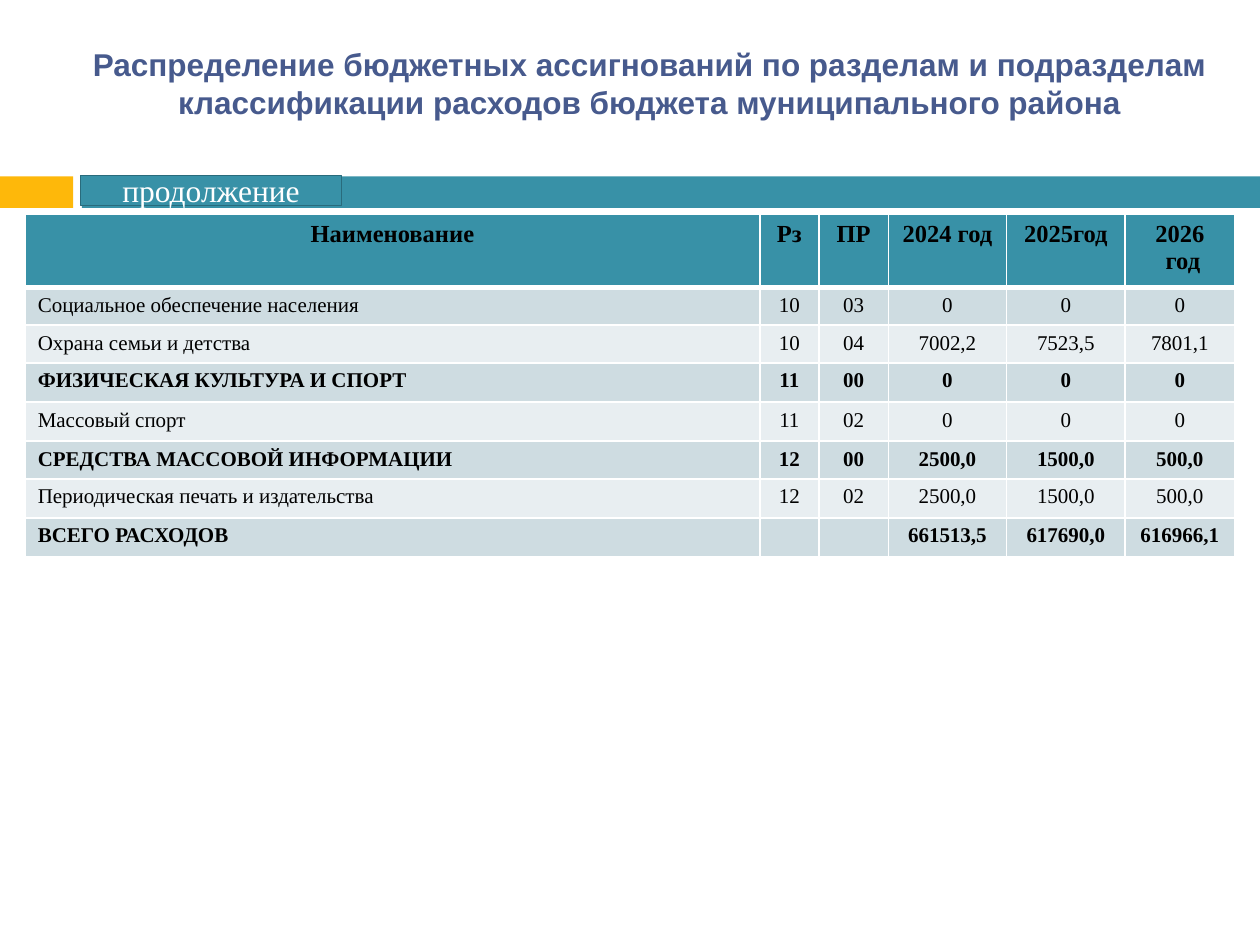
from lxml.etree import SubElement
from pptx import Presentation
from pptx.dml.color import RGBColor
from pptx.enum.shapes import MSO_SHAPE
from pptx.enum.text import MSO_ANCHOR, PP_ALIGN
from pptx.oxml.ns import qn
from pptx.util import Inches, Pt

TEAL = RGBColor(0x38, 0x91, 0xA7)
EDGE = RGBColor(0x29, 0x6B, 0x7C)
GOLD = RGBColor(0xFE, 0xB8, 0x0A)
NAVY = RGBColor(0x47, 0x5A, 0x8D)
DARK = RGBColor(0xCE, 0xDC, 0xE1)
PALE = RGBColor(0xE8, 0xEE, 0xF1)
BLACK = RGBColor(0, 0, 0)
WHITE = RGBColor(0xFF, 0xFF, 0xFF)
SERIF = "Times New Roman"

TITLE = ("Распределение бюджетных ассигнований по разделам и подразделам "
         "классификации расходов бюджета муниципального района")
COLS = [5.83, 0.47, 0.55, 0.94, 0.94, 0.87]
HEIGHTS = [0.58, 0.21, 0.22, 0.31, 0.31, 0.27, 0.31, 0.31]
ROWS = [
    ("Наименование", "Рз", "ПР", "2024 год", "2025год", "2026\n год"),
    ("Социальное обеспечение населения", "10", "03", "0", "0", "0"),
    ("Охрана семьи и детства", "10", "04", "7002,2", "7523,5", "7801,1"),
    ("ФИЗИЧЕСКАЯ КУЛЬТУРА И СПОРТ", "11", "00", "0", "0", "0"),
    ("Массовый спорт", "11", "02", "0", "0", "0"),
    ("СРЕДСТВА МАССОВОЙ ИНФОРМАЦИИ", "12", "00", "2500,0", "1500,0", "500,0"),
    ("Периодическая печать и издательства", "12", "02", "2500,0", "1500,0", "500,0"),
    ("ВСЕГО РАСХОДОВ", "", "", "661513,5", "617690,0", "616966,1"),
]


def set_text(frame, text, size, color, font=SERIF, bold=False, align=PP_ALIGN.CENTER):
    frame.text = text
    for para in frame.paragraphs:
        para.alignment = align
        for run in para.runs:
            run.font.name = font
            run.font.size = Pt(size)
            run.font.bold = bold
            run.font.color.rgb = color
        # The end mark sets the line height of an empty cell.
        SubElement(para._p, qn("a:endParaRPr"), sz=str(size * 100))


def add_title(slide, x, y, w, h):
    frame = slide.shapes.add_textbox(Inches(x), Inches(y), Inches(w), Inches(h)).text_frame
    frame.word_wrap = True
    frame.vertical_anchor = MSO_ANCHOR.MIDDLE
    set_text(frame, TITLE, 18, NAVY, "Arial", True)


def add_bar(slide, x, y, w, h, fill):
    bar = slide.shapes.add_shape(
        MSO_SHAPE.RECTANGLE, Inches(x), Inches(y), Inches(w), Inches(h))
    bar.shadow.inherit = False
    bar.fill.solid()
    bar.fill.fore_color.rgb = fill
    bar.line.fill.background()
    return bar


def add_band(slide, x, y, w, h):
    add_bar(slide, x, y, 0.58, h, GOLD)
    add_bar(slide, x + 0.65, y, w - 0.65, h, TEAL)


def add_label(slide, x, y, w, h):
    label = add_bar(slide, x, y, w, h, TEAL)
    label.line.color.rgb = EDGE
    label.line.width = Pt(0.25)
    label.text_frame.vertical_anchor = MSO_ANCHOR.MIDDLE
    set_text(label.text_frame, "продолжение", 18, WHITE)


def add_borders(cell, top, bottom):
    props = cell._tc.get_or_add_tcPr()
    for side, width in (("L", 1), ("R", 1), ("T", top), ("B", bottom)):
        line = SubElement(props, qn(f"a:ln{side}"), w=str(Pt(width)))
        fill = SubElement(line, qn("a:solidFill"))
        SubElement(fill, qn("a:srgbClr"), val=str(WHITE))


def add_budget(slide, x, y):
    table = slide.shapes.add_table(
        len(ROWS), len(COLS), Inches(x), Inches(y),
        Inches(sum(COLS)), Inches(sum(HEIGHTS))).table
    for col, width in zip(table.columns, COLS):
        col.width = Inches(width)
    for r, (row, height) in enumerate(zip(ROWS, HEIGHTS)):
        table.rows[r].height = Inches(height)
        head = r == 0
        fill = TEAL if head else DARK if r % 2 else PALE
        bold = row[0].isupper() or head
        for c, text in enumerate(row):
            cell = table.cell(r, c)
            add_borders(cell, 3 if r == 1 else 1, 3 if head else 1)
            cell.fill.solid()
            cell.fill.fore_color.rgb = fill
            align = PP_ALIGN.CENTER if head or c else PP_ALIGN.LEFT
            set_text(cell.text_frame, text, 14 if head else 12, BLACK,
                     bold=bold, align=align)


def main():
    deck = Presentation()
    deck.slide_width, deck.slide_height = Inches(10), Inches(7.5)
    slide = deck.slides.add_slide(deck.slide_layouts[6])
    add_band(slide, 0, 1.4, 10, 0.25)
    add_title(slide, 0.43, 0.25, 9.45, 0.82)
    add_budget(slide, 0.2, 1.7)
    add_label(slide, 0.64, 1.39, 2.07, 0.24)
    deck.save("out.pptx")


if __name__ == "__main__":
    main()
